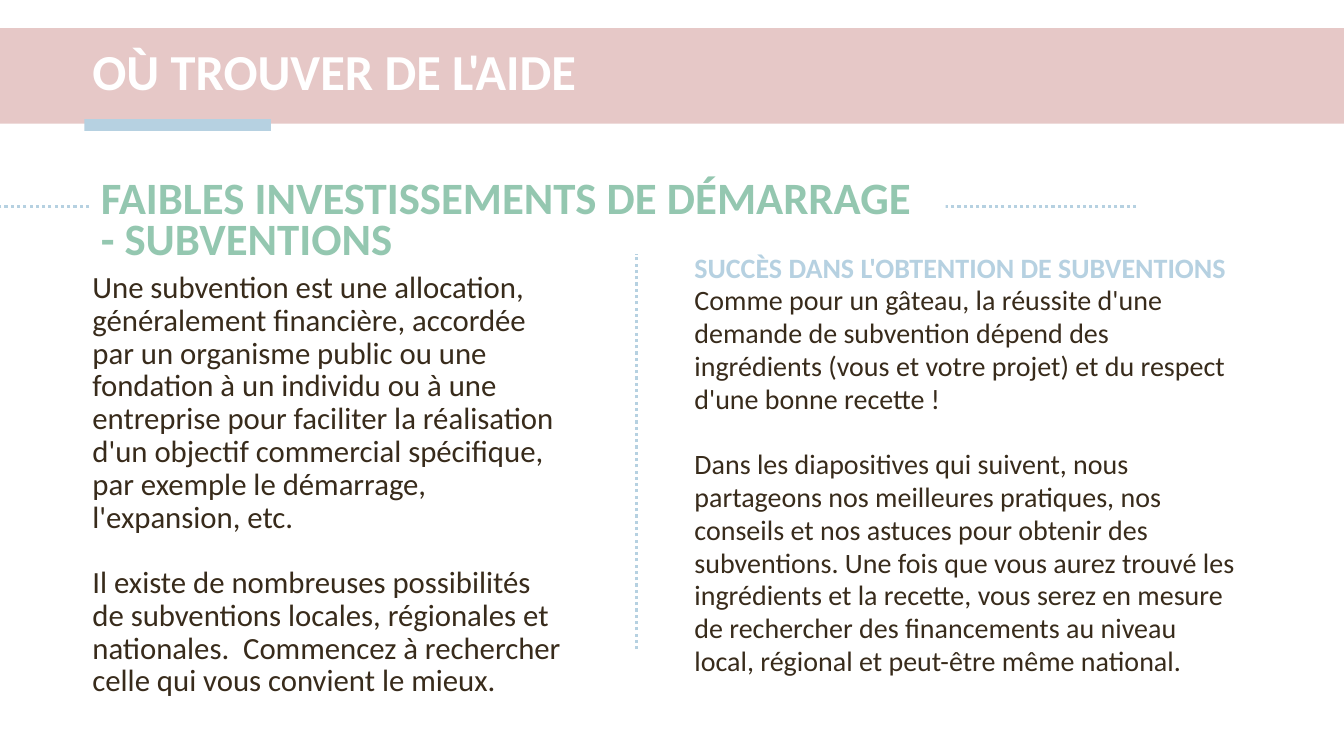
from lxml.etree import SubElement
from pptx import Presentation
from pptx.dml.color import RGBColor
from pptx.enum.dml import MSO_LINE
from pptx.enum.shapes import MSO_CONNECTOR, MSO_SHAPE
from pptx.enum.text import MSO_ANCHOR, PP_ALIGN
from pptx.oxml.ns import qn
from pptx.util import Cm, Pt

PINK = RGBColor(0xE6, 0xC8, 0xC7)
BLUE = RGBColor(0xB6, 0xD1, 0xE1)
GREEN = RGBColor(0x94, 0xC7, 0xB0)
BROWN = RGBColor(0x38, 0x2B, 0x1B)
WHITE = RGBColor(0xFF, 0xFF, 0xFF)

# Content: paragraphs are (text, colour, bold, space before in points)
SLIDE_WIDTH, SLIDE_HEIGHT = 33.87, 19.05
LINE_PITCH = Pt(23.4)
TITLE = [("OÙ TROUVER DE L'AIDE", WHITE, True, 0)]
HEADING = [("FAIBLES INVESTISSEMENTS DE DÉMARRAGE - SUBVENTIONS", GREEN, True, 0)]
DEFINITION = [
    ("Une subvention est une allocation, généralement financière, accordée par un "
     "organisme public ou une fondation à un individu ou à une entreprise pour "
     "faciliter la réalisation d'un objectif commercial spécifique, par exemple le "
     "démarrage, l'expansion, etc.", BROWN, False, 0),
    ("Il existe de nombreuses possibilités de subventions locales, régionales et "
     "nationales.  Commencez à rechercher celle qui vous convient le mieux.",
     BROWN, False, 23.4),
]
SUCCESS = [
    ("SUCCÈS DANS L'OBTENTION DE SUBVENTIONS", BLUE, True, 0),
    ("Comme pour un gâteau, la réussite d'une demande de subvention dépend des "
     "ingrédients (vous et votre projet) et du respect d'une bonne recette !",
     BROWN, False, 0),
    ("Dans les diapositives qui suivent, nous partageons nos meilleures pratiques, "
     "nos conseils et nos astuces pour obtenir des subventions. Une fois que vous "
     "aurez trouvé les ingrédients et la recette, vous serez en mesure de rechercher "
     "des financements au niveau local, régional et peut-être même national.",
     BROWN, False, 23.4),
]

presentation = Presentation()
presentation.slide_width = Cm(SLIDE_WIDTH)
presentation.slide_height = Cm(SLIDE_HEIGHT)
slide = presentation.slides.add_slide(presentation.slide_layouts[6])


def add_rectangle(left, top, width, height, colour):
    shape = slide.shapes.add_shape(
        MSO_SHAPE.RECTANGLE, Cm(left), Cm(top), Cm(width), Cm(height))
    shape.shadow.inherit = False
    shape.fill.solid()
    shape.fill.fore_color.rgb = colour
    shape.line.fill.background()
    return shape


def add_text_box(left, top, width, height):
    return slide.shapes.add_textbox(Cm(left), Cm(top), Cm(width), Cm(height))


def add_dotted_line(start_x, start_y, end_x, end_y):
    line = slide.shapes.add_connector(
        MSO_CONNECTOR.STRAIGHT, Cm(start_x), Cm(start_y), Cm(end_x), Cm(end_y))
    line.line.color.rgb = BLUE
    line.line.width = Pt(2.25)
    line.line.dash_style = MSO_LINE.ROUND_DOT
    SubElement(line._element.spPr, qn("a:effectLst"))


def write(shape, paragraphs, size, line_spacing, anchor=MSO_ANCHOR.TOP):
    frame = shape.text_frame
    frame.word_wrap = True
    frame.vertical_anchor = anchor
    for index, (text, colour, bold, space_before) in enumerate(paragraphs):
        paragraph = frame.add_paragraph() if index else frame.paragraphs[0]
        paragraph.alignment = PP_ALIGN.LEFT
        paragraph.line_spacing = line_spacing
        paragraph.space_before = Pt(space_before)
        run = paragraph.add_run()
        run.text = text
        run.font.name = "Calibri"
        run.font.size = Pt(size)
        run.font.bold = bold
        run.font.color.rgb = colour


# Title band with its accent bar
add_rectangle(0, 0.71, SLIDE_WIDTH, 2.41, PINK)
add_rectangle(2.13, 3, 4.7, 0.3, BLUE)
write(add_text_box(2.08, 0.86, 30.3, 2.01), TITLE, 36, 0.9, MSO_ANCHOR.MIDDLE)

# Heading interrupting the dotted line
add_dotted_line(28.63, 5.21, -1.6, 5.21)
write(add_rectangle(2.29, 4.47, 21.54, 1.22, WHITE), HEADING, 32, Pt(29.4))

# Two text columns and their divider
write(add_text_box(2.08, 6.73, 12.32, 8.94), DEFINITION, 22, LINE_PITCH)
write(add_text_box(17.25, 6.2, 14.22, 8.94), SUCCESS, 20, LINE_PITCH)
add_dotted_line(16.05, 16.36, 16.05, 6.4)

presentation.save("out.pptx")
